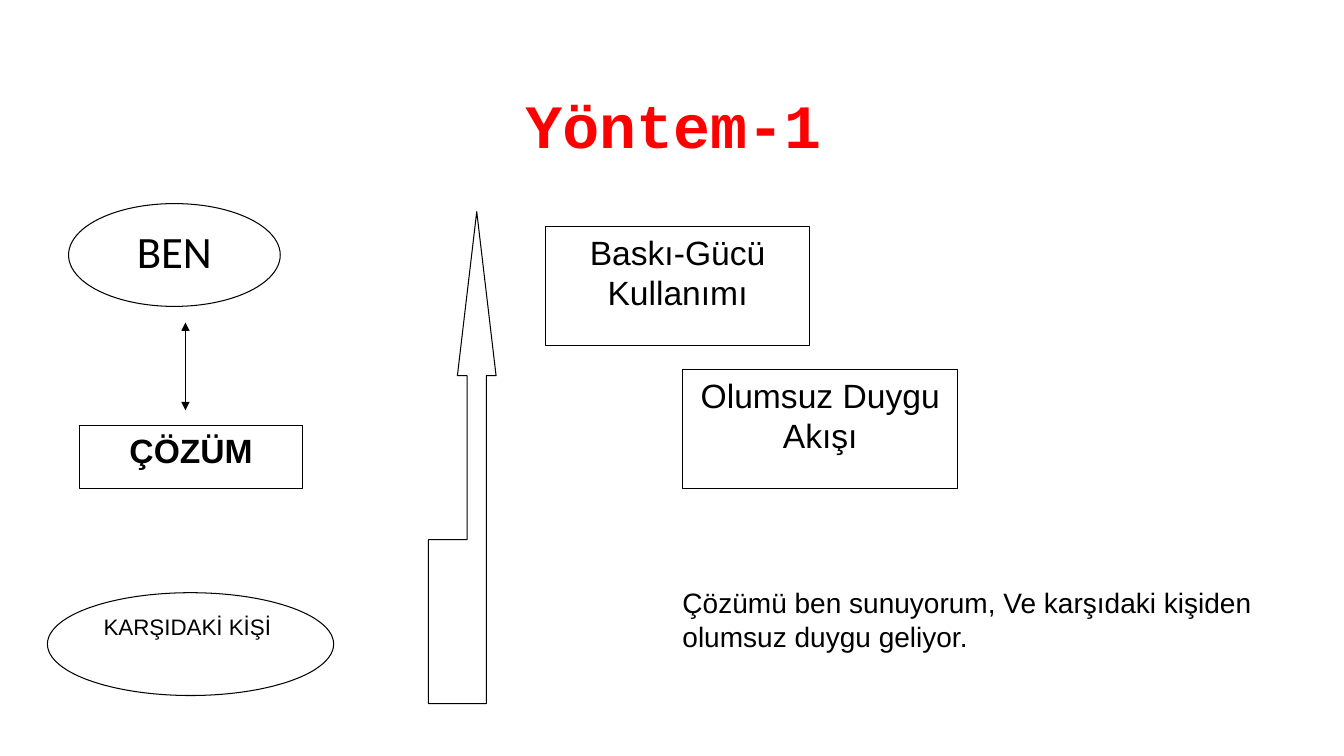
"""Build the "Yöntem-1" slide: a solution flow beside its consequences."""
import dataclasses

import lxml.etree
import pptx
import pptx.dml.color
import pptx.enum.shapes
import pptx.enum.text
import pptx.oxml.ns
import pptx.util


@dataclasses.dataclass(frozen=True)
class Theme:
    ink: str = "000000"
    paper: str = "FFFFFF"
    accent: str = "FF0000"
    sans: str = "Arial"
    title_font: str = "Courier New"
    body_font: str = "Calibri"
    title_size: int = 44
    body_size: int = 32
    box_size: int = 24
    note_size: int = 20
    small_size: int = 16
    line_width: float = 0.75


theme = Theme()
qn = pptx.oxml.ns.qn
rgb = pptx.dml.color.RGBColor.from_string
shape_type = pptx.enum.shapes.MSO_SHAPE
align = pptx.enum.text.PP_ALIGN
anchor = pptx.enum.text.MSO_ANCHOR

presentation = pptx.Presentation()
presentation.slide_width = pptx.util.Inches(13.33)
presentation.slide_height = pptx.util.Inches(7.5)
column = presentation.slide_width / 100
row = presentation.slide_height / 100
slide = presentation.slides.add_slide(presentation.slide_layouts[1])


def grid(left, top, width, height):
    """Turn hundredths of the slide into lengths."""
    return int(left * column), int(top * row), int(width * column), int(height * row)


def write(shape, text, size, font=theme.sans, color=theme.ink, bold=False,
          alignment=align.CENTER, vertical=anchor.TOP):
    """Put one formatted paragraph into a shape."""
    frame = shape.text_frame
    frame.text = text
    frame.word_wrap = True
    frame.auto_size = pptx.enum.text.MSO_AUTO_SIZE.NONE
    frame.vertical_anchor = vertical
    paragraph = frame.paragraphs[0]
    paragraph.alignment = alignment
    paragraph.space_before = pptx.util.Pt(0)
    for run in paragraph.runs:
        run.font.size = pptx.util.Pt(size)
        run.font.name = font
        run.font.bold = bold
        run.font.color.rgb = rgb(color)


title = slide.shapes.title
title.left, title.top, title.width, title.height = grid(5.1, 8, 90, 16.67)
write(title, "Yöntem-1", theme.title_size, theme.title_font, theme.accent, True,
      vertical=anchor.MIDDLE)

me = slide.placeholders[1]
me.left, me.top, me.width, me.height = grid(5.1, 26.93, 15.75, 13.6)
geometry = lxml.etree.Element(qn("a:prstGeom"), prst="ellipse")
lxml.etree.SubElement(geometry, qn("a:avLst"))
me.element.spPr.find(qn("a:xfrm")).addnext(geometry)
write(me, "BEN", theme.body_size, theme.body_font)
properties = me.text_frame.paragraphs[0]._p.get_or_add_pPr()
properties.set("marL", "0")
properties.set("indent", "0")
lxml.etree.SubElement(properties, qn("a:buNone"))

link = slide.shapes.add_connector(
    pptx.enum.shapes.MSO_CONNECTOR.STRAIGHT,
    int(13.8 * column), int(42.67 * row), int(13.8 * column), int(54.27 * row))
link.line.color.rgb = rgb(theme.ink)
link.line.width = pptx.util.Pt(theme.line_width)
for end in ("a:headEnd", "a:tailEnd"):
    lxml.etree.SubElement(link.line._get_or_add_ln(), qn(end), type="triangle")
lxml.etree.SubElement(link.element.spPr, qn("a:effectLst"))

left, top, width, height = grid(31.88, 28, 5.03, 65.07)
outline = [(5, 0), (3, 1), (4, 1), (4, 2), (0, 2), (0, 3), (6, 3), (6, 1), (7, 1)]
builder = slide.shapes.build_freeform(*outline[0], scale=(width / 7, height / 3))
builder.add_line_segments(outline[1:], close=True)
rising_arrow = builder.convert_to_shape(left, top)

outlined = [me, rising_arrow]
boxes = [
    (shape_type.RECTANGLE, (5.93, 56.27, 16.58, 8.4), "ÇÖZÜM", theme.box_size, True),
    (shape_type.OVAL, (3.53, 78.4, 21.3, 13.6), "KARŞIDAKİ KİŞİ ", theme.small_size, False),
    (shape_type.RECTANGLE, (40.59, 30, 19.65, 15.73), "Baskı-Gücü Kullanımı",
     theme.box_size, False),
    (shape_type.RECTANGLE, (50.79, 48.93, 20.48, 15.73), "Olumsuz Duygu Akışı",
     theme.box_size, False),
]
for kind, place, text, size, bold in boxes:
    box = slide.shapes.add_shape(kind, *grid(*place))
    write(box, text, size, bold=bold)
    outlined.append(box)

for shape in outlined:
    shape.fill.solid()
    shape.fill.fore_color.rgb = rgb(theme.paper)
    shape.line.color.rgb = rgb(theme.ink)
    shape.line.width = pptx.util.Pt(theme.line_width)
for shape in outlined[1:]:
    shape.shadow.inherit = False

note = slide.shapes.add_textbox(*grid(50.04, 76.27, 45.69, 14.8))
write(note, "Çözümü ben sunuyorum, Ve karşıdaki kişiden olumsuz duygu geliyor.",
      theme.note_size, alignment=align.LEFT)
note.text_frame.margin_top = pptx.util.Inches(0.09)

presentation.save("out.pptx")
